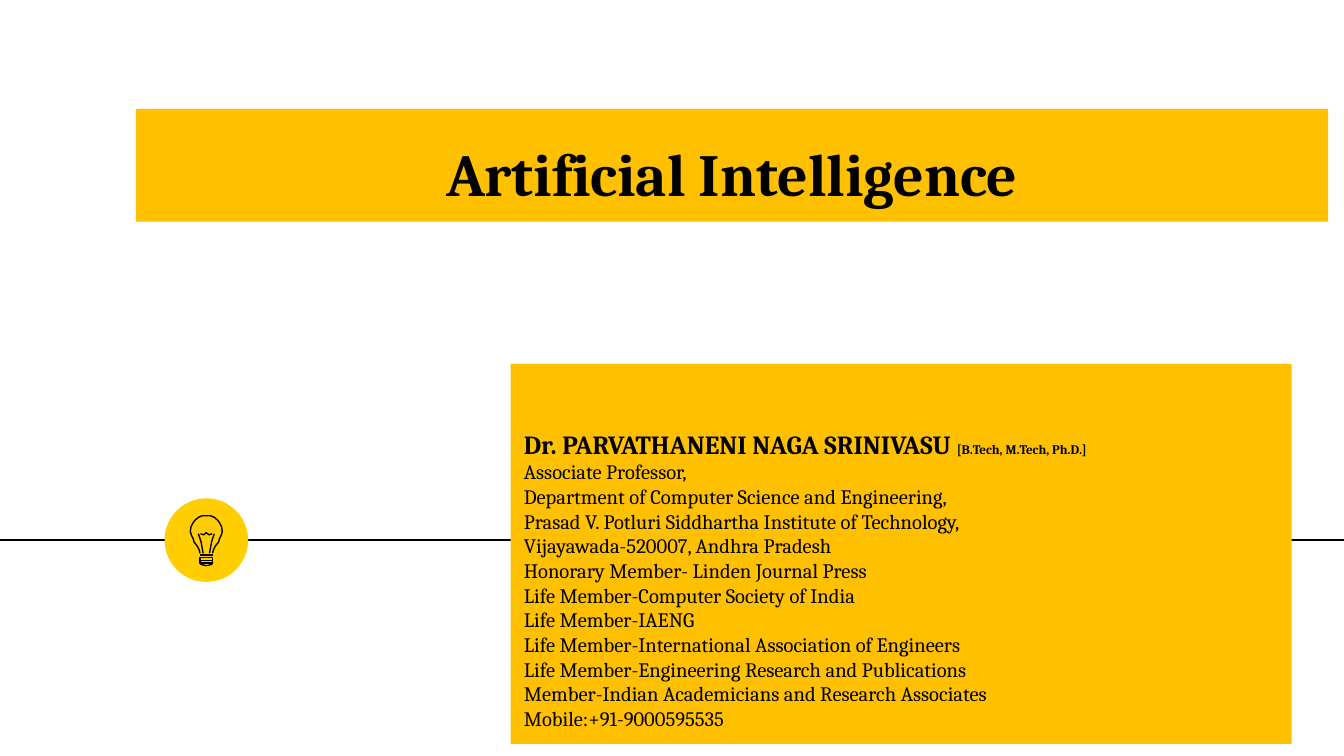
import pptx
import pptx.dml.color
import pptx.enum.shapes
import pptx.enum.text
import pptx.oxml
import pptx.oxml.ns
import pptx.util

Cm = pptx.util.Cm
Pt = pptx.util.Pt
ALIGN = pptx.enum.text.PP_ALIGN
COLOURS = {"band": "FFC000", "disc": "FFCD00", "ink": "000000"}
FONT = "Cambria"
STROKE = 0.75

CREDENTIALS = [
    "Associate Professor,",
    "Department of Computer Science and Engineering,",
    "Prasad V. Potluri Siddhartha Institute of Technology,",
    "Vijayawada-520007, Andhra Pradesh",
    "Honorary Member- Linden Journal Press",
    "Life Member-Computer Society of India",
    "Life Member-IAENG",
    "Life Member-International Association of Engineers",
    "Life Member-Engineering Research and\u00a0Publications",
    "Member-Indian Academicians and Research Associates",
    "Mobile:+91-9000595535",
]

# Right half of the glass, from neck to crown, in cm from the disc centre
GLASS_HALF = [(0.12, 0.25), (0.13, 0.2), (0.15, 0.15), (0.18, 0.1), (0.23, 0.04),
              (0.25, -0.03), (0.28, -0.09), (0.3, -0.15), (0.3, -0.18),
              (0.29, -0.25), (0.25, -0.33), (0.21, -0.38), (0.15, -0.43),
              (0.08, -0.46), (0, -0.46)]
FILAMENT = [(0.06, 0.25), (0.1, 0.03), (0.15, -0.12)]
COIL = [(-0.11, -0.12), (-0.05, -0.1), (0, -0.14), (0.05, -0.1), (0.11, -0.12)]
TIP = [(-0.12, 0.43), (-0.1, 0.46), (-0.02, 0.48), (0.02, 0.48), (0.1, 0.46), (0.12, 0.43)]


def colour(name):
    return pptx.dml.color.RGBColor.from_string(COLOURS[name])


def write(paragraph, text, size, bold=False, align=ALIGN.LEFT):
    paragraph.alignment = align
    paragraph.space_before = Pt(0)
    run = paragraph.add_run()
    run.text = text
    run.font.name = FONT
    run.font.size = Pt(size)
    run.font.bold = bold
    run.font.color.rgb = colour("ink")


def band(placeholder, left, top, width, height):
    """Turn a placeholder into a filled band with bottom-anchored text."""
    placeholder.left, placeholder.top = Cm(left), Cm(top)
    placeholder.width, placeholder.height = Cm(width), Cm(height)
    placeholder.fill.solid()
    placeholder.fill.fore_color.rgb = colour("band")
    frame = placeholder.text_frame
    frame.word_wrap = True
    frame.auto_size = pptx.enum.text.MSO_AUTO_SIZE.NONE
    frame.vertical_anchor = pptx.enum.text.MSO_ANCHOR.BOTTOM
    frame.margin_left = frame.margin_right = Cm(0.25)
    frame.margin_top = frame.margin_bottom = Cm(0.25)
    return frame


def title_band(slide, left, top, width, height):
    frame = band(slide.shapes.title, left, top, width, height)
    write(frame.paragraphs[0], "Artificial Intelligence", size=32, bold=True, align=ALIGN.CENTER)


def lecturer_band(slide, left, top, width, height):
    frame = band(slide.placeholders[1], left, top, width, height)
    heading = frame.paragraphs[0]
    write(heading, "Dr. PARVATHANENI NAGA SRINIVASU ", size=14, bold=True)
    write(heading, "[B.Tech, M.Tech, Ph.D.]", size=7, bold=True)
    for credential in CREDENTIALS:
        write(frame.add_paragraph(), credential, size=11)


def straight_line(shapes, left, right, y):
    line = shapes.add_connector(pptx.enum.shapes.MSO_CONNECTOR.STRAIGHT,
                                Cm(left), Cm(y), Cm(right), Cm(y))
    line.line.color.rgb = colour("ink")
    line.line.width = Pt(STROKE)
    properties = line.element.find(pptx.oxml.ns.qn("p:spPr"))
    properties.append(pptx.oxml.parse_xml(
        f'<a:effectLst {pptx.oxml.ns.nsdecls("a")}/>'))
    return line


def bulb_badge(slide, left, top, size):
    disc = slide.shapes.add_shape(pptx.enum.shapes.MSO_SHAPE.OVAL,
                                  Cm(left), Cm(top), Cm(size), Cm(size))
    disc.shadow.inherit = False
    disc.fill.solid()
    disc.fill.fore_color.rgb = colour("disc")
    disc.line.fill.background()

    centre_x, centre_y = left + size / 2, top + size / 2
    bulb = slide.shapes.add_group_shape().shapes

    def stroke(points, close=False):
        spots = [(Cm(centre_x + x), Cm(centre_y + y)) for x, y in points]
        builder = bulb.build_freeform(*spots[0])
        builder.add_line_segments(spots[1:], close=close)
        outline = builder.convert_to_shape()
        outline.shadow.inherit = False
        outline.fill.background()
        outline.line.color.rgb = colour("ink")
        outline.line.width = Pt(STROKE)

    def mirrored(points):
        return [(-x, y) for x, y in points]

    for y in (0.38, 0.33):
        stroke([(-0.12, y), (0.12, y), (0.12, y + 0.05), (-0.12, y + 0.05)], close=True)
    stroke(TIP, close=True)
    stroke(GLASS_HALF + mirrored(GLASS_HALF[-2::-1]))
    stroke(FILAMENT)
    stroke(mirrored(FILAMENT))
    stroke(COIL)
    straight_line(bulb, centre_x - 0.12, centre_x + 0.12, centre_y + 0.28)


def main():
    deck = pptx.Presentation()
    deck.slide_width, deck.slide_height = Cm(25.4), Cm(14.29)
    slide = deck.slides.add_slide(deck.slide_layouts[0])
    title_band(slide, 2.57, 2.06, 22.53, 2.13)
    lecturer_band(slide, 9.65, 6.88, 14.76, 7.18)
    axis = straight_line(slide.shapes, -0.03, 25.43, 10.21)
    slide.shapes.title.element.addprevious(axis.element)  # behind the bands
    bulb_badge(slide, 3.11, 9.42, 1.58)
    deck.save("out.pptx")


if __name__ == "__main__":
    main()
